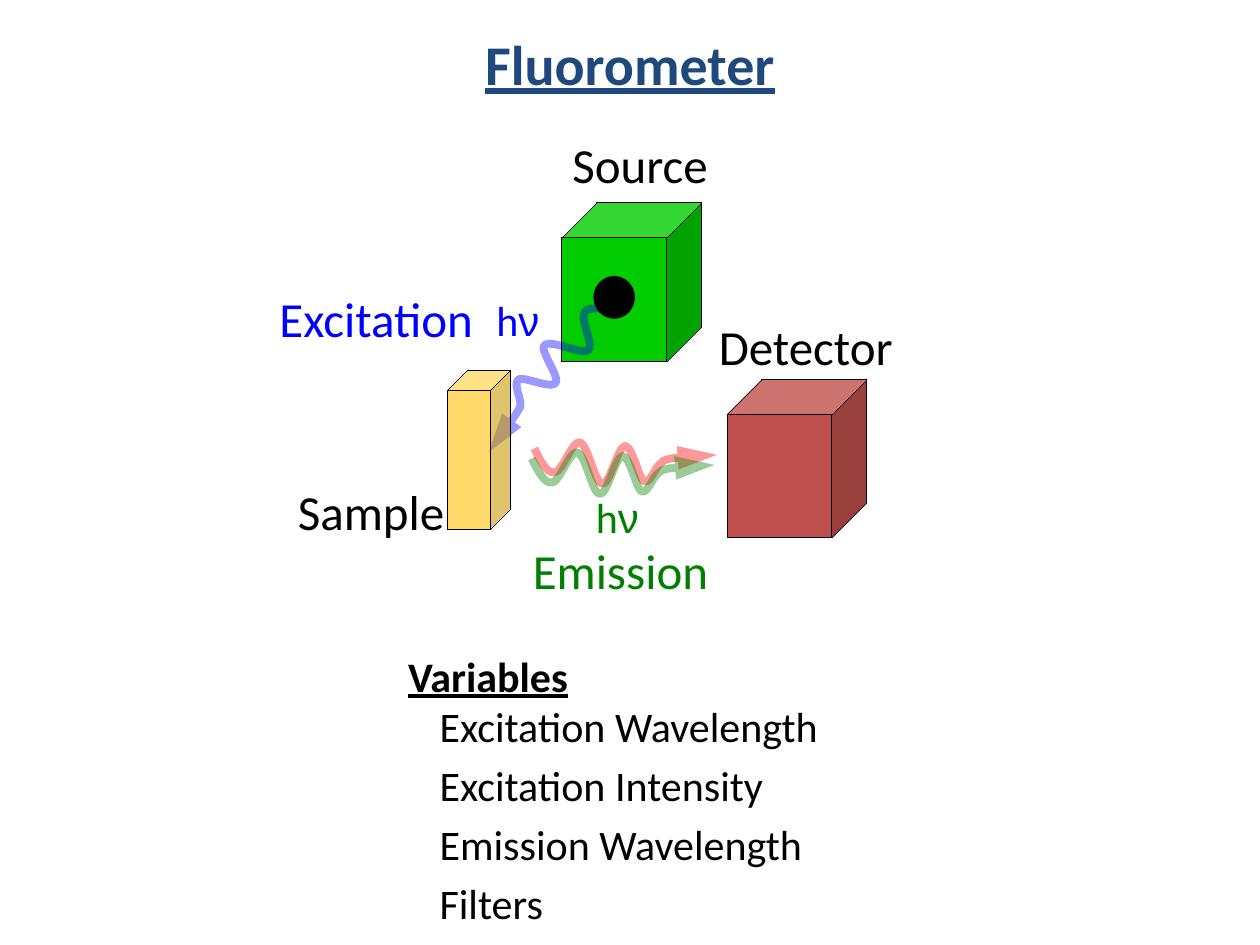
from lxml import etree
from pptx import Presentation
from pptx.dml.color import RGBColor
from pptx.enum.shapes import MSO_SHAPE
from pptx.enum.text import MSO_ANCHOR, MSO_AUTO_SIZE, PP_ALIGN
from pptx.oxml.ns import qn
from pptx.util import Inches, Pt

CUBE, OVAL = MSO_SHAPE.CUBE, MSO_SHAPE.OVAL
LEFT, CENTER = PP_ALIGN.LEFT, PP_ALIGN.CENTER
MIDDLE, TOP = MSO_ANCHOR.MIDDLE, MSO_ANCHOR.TOP
GROW, FIXED = MSO_AUTO_SIZE.SHAPE_TO_FIT_TEXT, MSO_AUTO_SIZE.NONE

BLACK = RGBColor(0x00, 0x00, 0x00)
NAVY = RGBColor(0x1F, 0x49, 0x7D)
BLUE = RGBColor(0x00, 0x00, 0xFF)
RED = RGBColor(0xFF, 0x00, 0x00)
GREEN = RGBColor(0x00, 0x80, 0x00)
SOURCE_GREEN = RGBColor(0x00, 0xCC, 0x00)
DETECTOR_RED = RGBColor(0xC0, 0x50, 0x4D)
SAMPLE_GOLD = RGBColor(0xFF, 0xC0, 0x00)

COLUMNS, ROWS = 100, 75

# Waves as Bezier points: a start, then two controls and an end per curve
EXCITATION_WAVE = [
    (38.8, 35.9),
    (38.8, 35.9), (40.6, 33.4), (41, 32.8), (41.4, 32.1), (41.3, 32.4), (41.3, 32),
    (41.3, 31.5), (40.7, 30.4), (41.2, 30.1), (41.6, 29.9), (43.8, 30.9), (44.1, 30.4),
    (44.5, 30), (42.8, 27.8), (43.2, 27.4), (43.7, 26.9), (46.2, 28.2), (46.7, 27.8),
    (47.2, 27.4), (46, 25.4), (46.4, 24.8), (46.7, 24.3), (47.8, 24.5), (48.8, 24.6),
]
EMISSION_WAVE = [
    (56.9, 36.1),
    (56.9, 36.1), (54, 36.3), (53.2, 36.4), (52.5, 36.6), (52.8, 36.5), (52.4, 36.8),
    (52, 37.1), (51.6, 38.4), (51.1, 38.2), (50.7, 38), (50.2, 35.4), (49.6, 35.4),
    (49, 35.5), (48.4, 38.5), (47.8, 38.4), (47.2, 38.4), (46.7, 35.3), (46, 35.1),
    (45.4, 35), (44.6, 37.5), (44, 37.5), (43.4, 37.6), (42.9, 36.6), (42.4, 35.6),
]


class Diagram:
    font = "Calibri"
    symbol_font = "Arial"
    wave_width = Pt(4.5)
    wave_opacity = 40

    def __init__(self, presentation):
        self.slide = presentation.slides.add_slide(presentation.slide_layouts[6])
        self.column = presentation.slide_width / COLUMNS
        self.row = presentation.slide_height / ROWS

    def place(self, left, top, width, height):
        return (round(left * self.column), round(top * self.row),
                round(width * self.column), round(height * self.row))

    @staticmethod
    def set_opacity(properties, percent):
        color = properties.find(qn("a:solidFill"))[0]
        etree.SubElement(color, qn("a:alpha"), val=str(percent * 1000))

    def text_box(self, box, anchor=TOP, fit=GROW, wrap=True):
        frame = self.slide.shapes.add_textbox(*self.place(*box)).text_frame
        frame.word_wrap = wrap
        frame.auto_size = fit
        frame.vertical_anchor = anchor
        return frame

    def add_run(self, paragraph, text, size, color, font=None, heading=False):
        run = paragraph.add_run()
        run.text = text
        run.font.name = font or self.font
        run.font.size = Pt(size)
        run.font.color.rgb = color
        run.font.bold = run.font.underline = heading

    def label(self, text, box, size=28, color=BLACK, align=CENTER, heading=False, **frame_style):
        paragraph = self.text_box(box, **frame_style).paragraphs[0]
        paragraph.alignment = align
        self.add_run(paragraph, text, size, color, heading=heading)

    def photon_label(self, left, top, color):
        paragraph = self.text_box((left, top, 6.2, 5)).paragraphs[0]
        self.add_run(paragraph, "h", 24, color)
        self.add_run(paragraph, "ν", 24, color, font=self.symbol_font)

    def headed_list(self, heading, items, box):
        frame = self.text_box(box)
        self.add_run(frame.paragraphs[0], heading, 24, BLACK, heading=True)
        for item in items:
            paragraph = frame.add_paragraph()
            paragraph.space_after = Pt(5)
            properties = paragraph._p.get_or_add_pPr()
            properties.set("marL", str(Inches(0.25)))
            properties.set("indent", "0")
            self.add_run(paragraph, item, 24, BLACK)

    def solid(self, kind, box, color):
        shape = self.slide.shapes.add_shape(kind, *self.place(*box))
        shape.shadow.inherit = False
        shape.fill.solid()
        shape.fill.fore_color.rgb = color
        shape.line.fill.background()
        return shape

    def cube(self, box, color, depth=0.25, opacity=100):
        shape = self.solid(CUBE, box, color)
        shape.adjustments[0] = depth
        shape.line.color.rgb = BLACK
        # A hairline needs its zero width written out
        shape.line._get_or_add_ln().set("w", "0")
        if opacity < 100:
            self.set_opacity(shape._element.spPr, opacity)

    def wave(self, controls, color, shift=(0, 0), shapes=None):
        points = [(round((x + shift[0]) * self.column), round((y + shift[1]) * self.row))
                  for x, y in controls]
        builder = (shapes or self.slide.shapes).build_freeform(*points[0])
        builder.add_line_segments(points[3::3], close=False)
        shape = builder.convert_to_shape()
        self.bend(shape, points)
        shape.shadow.inherit = False
        shape.fill.background()
        shape.line.color.rgb = color
        shape.line.width = self.wave_width
        line = shape.line._get_or_add_ln()
        self.set_opacity(line, self.wave_opacity)
        etree.SubElement(line, qn("a:round"))
        etree.SubElement(line, qn("a:headEnd"), type="triangle", w="med", len="lg")

    @staticmethod
    def bend(shape, points):
        """Turn each straight segment into a cubic Bezier curve."""
        segments = list(shape._element.iter(qn("a:lnTo")))
        for index, segment in enumerate(segments):
            segment.tag = qn("a:cubicBezTo")
            first = 3 * index + 1
            for position, (x, y) in enumerate(points[first:first + 2]):
                control = etree.Element(qn("a:pt"), x=str(x - shape.left), y=str(y - shape.top))
                segment.insert(position, control)


def main():
    presentation = Presentation()
    presentation.slide_width, presentation.slide_height = Inches(10), Inches(7.5)
    diagram = Diagram(presentation)

    # Title
    diagram.label("Fluorometer", (5, 0, 90, 10), size=32, color=NAVY, heading=True,
                  anchor=MIDDLE, fit=FIXED)

    # Source, sample label and detector
    diagram.cube((44.6, 16.1, 11.1, 12.6), SOURCE_GREEN)
    diagram.label("Source", (41.3, 10.2, 19, 5.7))
    diagram.photon_label(38.4, 22.9, BLUE)
    diagram.label("Sample", (18.3, 37.7, 22.3, 5.7))
    diagram.label("Detector", (51.1, 24.6, 25.7, 5.7))
    diagram.cube((57.7, 30.1, 11.1, 12.6), DETECTOR_RED)

    # Excitation light leaving the source opening
    diagram.wave(EXCITATION_WAVE, BLUE)
    diagram.solid(OVAL, (47.1, 21.9, 3.3, 3.4), BLACK)

    # Variables
    diagram.headed_list("Variables", ["Excitation Wavelength", "Excitation Intensity",
                                      "Emission Wavelength", "Filters"],
                        (31.4, 51.1, 39.4, 23.3))

    # Light labels
    diagram.label("Excitation", (21.2, 22.4, 17.6, 5.7), color=BLUE, align=LEFT, wrap=False)
    diagram.label("Emission", (41.3, 42.4, 16.1, 5.7), color=GREEN, align=LEFT, wrap=False)
    diagram.photon_label(46.3, 38.5, GREEN)

    # Translucent sample in front of the excitation light
    diagram.cube((35.5, 29.4, 5, 12.6), SAMPLE_GOLD, depth=0.32, opacity=58)

    # Emission light
    emission = diagram.slide.shapes.add_group_shape().shapes
    diagram.wave(EMISSION_WAVE, RED, shapes=emission)
    diagram.wave(EMISSION_WAVE, GREEN, shift=(-0.2, 0.8), shapes=emission)

    presentation.save("out.pptx")


if __name__ == "__main__":
    main()
